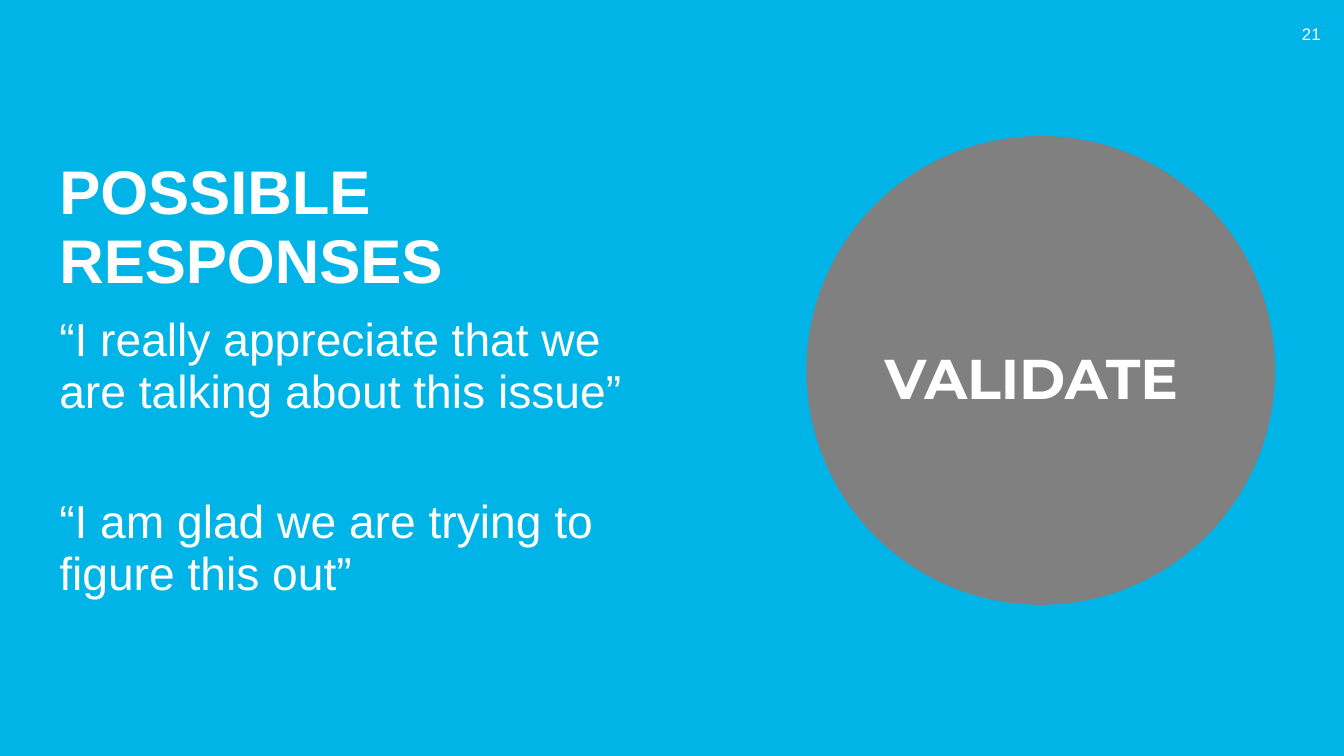
"""Build the slide of possible validating responses."""
from dataclasses import dataclass

from pptx import Presentation
from pptx.dml.color import RGBColor
from pptx.enum.shapes import MSO_SHAPE
from pptx.enum.text import MSO_ANCHOR, PP_ALIGN
from pptx.slide import Slide
from pptx.util import Pt

SKY_BLUE = RGBColor(0x01, 0xB4, 0xE7)
GRAY = RGBColor(0x80, 0x80, 0x80)
WHITE = RGBColor(0xFF, 0xFF, 0xFF)
SLIDE_WIDTH, SLIDE_HEIGHT = 960, 540


@dataclass(frozen=True)
class Box:
    left: float
    top: float
    width: float
    height: float

    def lengths(self) -> tuple[Pt, ...]:
        return tuple(Pt(value) for value in (self.left, self.top, self.width, self.height))


@dataclass(frozen=True)
class Panel:
    box: Box
    kind: MSO_SHAPE
    color: RGBColor


@dataclass(frozen=True)
class TextBlock:
    box: Box
    paragraphs: tuple[str, ...]
    font_format: dict
    paragraph_format: dict
    anchor: MSO_ANCHOR = MSO_ANCHOR.TOP
    gap: float = 0


PANELS = (
    Panel(Box(0, 0, SLIDE_WIDTH, SLIDE_HEIGHT), MSO_SHAPE.RECTANGLE, SKY_BLUE),
    Panel(Box(576, 97.2, 334.8, 334.8), MSO_SHAPE.OVAL, GRAY),
)
TEXT_BLOCKS = (
    TextBlock(
        Box(35.3, 221, 456.5, 218.9),
        (
            "“I really appreciate that we are talking about this issue”",
            "“I am glad we are trying to figure this out”",
        ),
        {"name": "Arial", "size": Pt(33)},
        {"line_spacing": 0.94},
        gap=55.7,
    ),
    TextBlock(
        Box(35.3, 126.7, 465.1, 89.3),
        ("POSSIBLE RESPONSES",),
        {"name": "Arial", "size": Pt(44), "bold": True},
        {"line_spacing": 0.93},
        MSO_ANCHOR.BOTTOM,
    ),
    TextBlock(
        Box(917.3, 9.4, 33.1, 28.8),
        ("21",),
        {"name": "Arial", "size": Pt(12)},
        {"alignment": PP_ALIGN.RIGHT},
        MSO_ANCHOR.MIDDLE,
    ),
    TextBlock(
        Box(582.5, 241.9, 319.7, 55.4),
        ("VALIDATE ",),
        {"name": "Montserrat", "size": Pt(40), "bold": True},
        {"alignment": PP_ALIGN.CENTER},
    ),
)


def apply_format(target: object, values: dict) -> None:
    for name, value in values.items():
        setattr(target, name, value)


def draw_panel(slide: Slide, panel: Panel) -> None:
    shape = slide.shapes.add_shape(panel.kind, *panel.box.lengths())
    shape.shadow.inherit = False
    shape.fill.solid()
    shape.fill.fore_color.rgb = panel.color
    shape.line.fill.background()


def draw_text(slide: Slide, block: TextBlock) -> None:
    frame = slide.shapes.add_textbox(*block.box.lengths()).text_frame
    apply_format(frame, {"word_wrap": True, "vertical_anchor": block.anchor})
    for index, text in enumerate(block.paragraphs):
        paragraph = frame.add_paragraph() if index else frame.paragraphs[0]
        apply_format(paragraph, block.paragraph_format)
        if index:
            paragraph.space_before = Pt(block.gap)
        run = paragraph.add_run()
        run.text = text
        apply_format(run.font, block.font_format)
        run.font.color.rgb = WHITE


def main() -> None:
    presentation = Presentation()
    apply_format(
        presentation,
        {"slide_width": Pt(SLIDE_WIDTH), "slide_height": Pt(SLIDE_HEIGHT)},
    )
    slide = presentation.slides.add_slide(presentation.slide_layouts[6])
    for panel in PANELS:
        draw_panel(slide, panel)
    for block in TEXT_BLOCKS:
        draw_text(slide, block)
    presentation.save("out.pptx")


if __name__ == "__main__":
    main()
